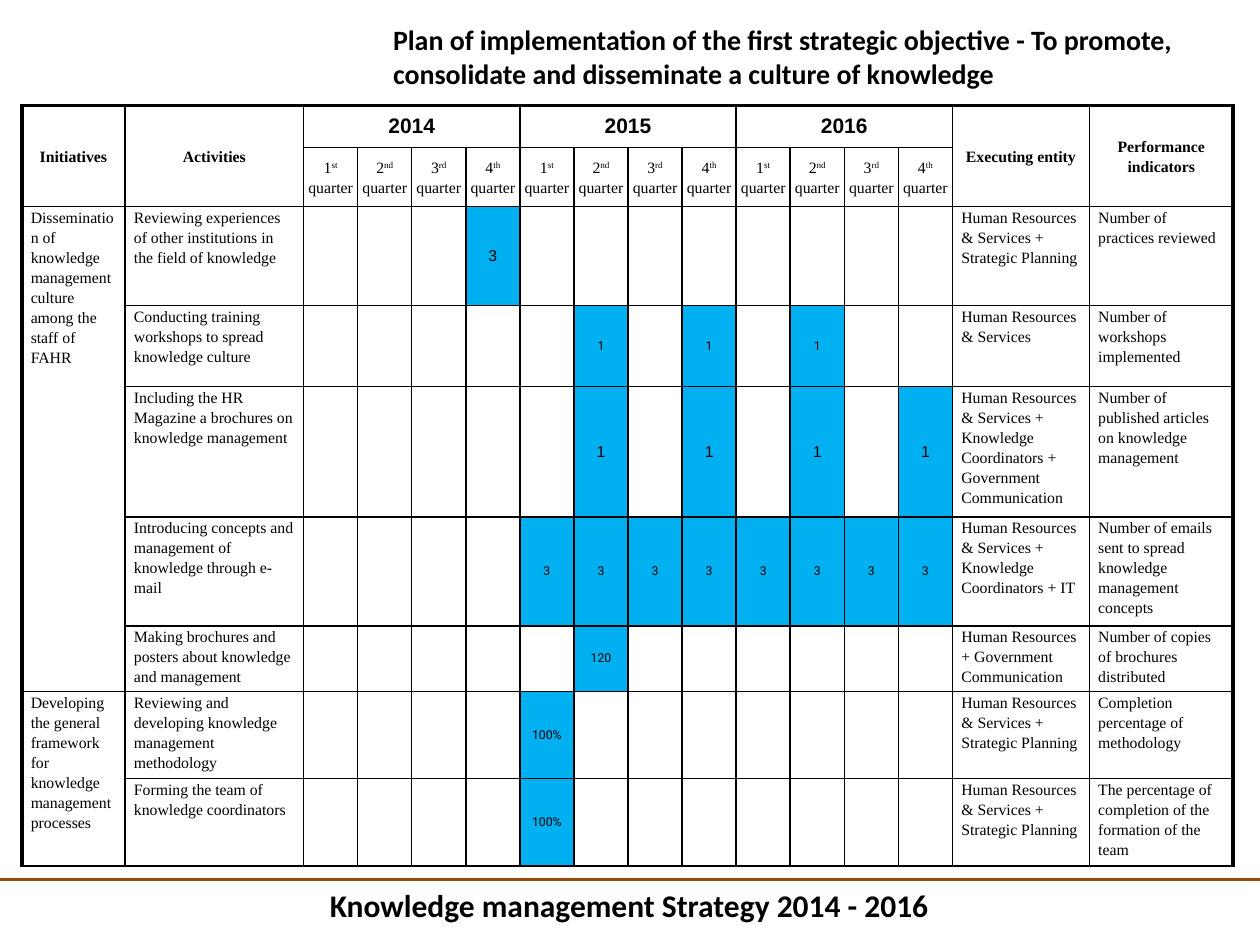
from lxml import etree
from pptx import Presentation
from pptx.dml.color import RGBColor
from pptx.enum.shapes import MSO_CONNECTOR
from pptx.enum.text import MSO_ANCHOR, PP_ALIGN
from pptx.oxml.ns import qn
from pptx.util import Cm, Pt

LEFT, CENTER = PP_ALIGN.LEFT, PP_ALIGN.CENTER
TOP, MIDDLE = MSO_ANCHOR.TOP, MSO_ANCHOR.MIDDLE
STRAIGHT = MSO_CONNECTOR.STRAIGHT

COLORS = {"ink": "000000", "paper": "FFFFFF", "active": "00B0F0", "rule": "984807"}
SERIF, SANS, HEAD = "Times New Roman", "Arial", "Calibri"
BODY = {"name": SERIF, "size": Pt(9), "bold": False}
LABEL = {**BODY, "bold": True}
YEAR = {"name": SANS, "size": Pt(12), "bold": True}
LARGE = {"name": SANS, "size": Pt(9), "bold": False}
SMALL = {"name": "Roboto", "size": Pt(7), "bold": False}
TITLE = {"name": HEAD, "size": Pt(16), "bold": True}
FOOTER = {"name": HEAD, "size": Pt(18), "bold": True}

COLS = [2.08, 3.6] + [1.09] * 12 + [2.76, 2.9]
ROWS = [0.84, 1.19, 2, 1.63, 1.98, 2.06, 1.27, 1.22, 1.4]
YEARS = ["2014", "2015", "2016"]
ENDINGS = ["st", "nd", "rd", "th"]
PAD = Cm(0.18)
FIRST, ENTITY, LAST = 2, 14, 15  # first quarter, entity and indicator columns
HEADS = {0: "Initiatives", 1: "Activities", ENTITY: "Executing entity",
         LAST: "Performance indicators"}
PLANNING = "Human Resources & Services + Strategic Planning"

# first row, last row, text
GOALS = [
    (2, 6, "Dissemination of knowledge management culture among the staff of FAHR"),
    (7, 8, "Developing the general framework for knowledge management processes"),
]

# activity, {quarter counted from 0: target}, target format, entity, indicator
TASKS = [
    ("Reviewing experiences of other institutions in the field of knowledge",
     {3: "3"}, LARGE, PLANNING, "Number of practices reviewed"),
    ("Conducting training workshops to spread knowledge culture",
     dict.fromkeys((5, 7, 9), "1"), SMALL,
     "Human Resources & Services", "Number of workshops implemented"),
    ("Including the HR Magazine a brochures on knowledge management",
     dict.fromkeys((5, 7, 9, 11), "1"), LARGE,
     "Human Resources & Services + Knowledge Coordinators + Government Communication",
     "Number of published articles on knowledge management"),
    ("Introducing concepts and management of knowledge through e-mail",
     dict.fromkeys(range(4, 12), "3"), SMALL,
     "Human Resources & Services + Knowledge Coordinators + IT",
     "Number of emails sent to spread knowledge management concepts"),
    ("Making brochures and posters about knowledge and management",
     {5: "120"}, SMALL, "Human Resources + Government Communication",
     "Number of copies of brochures distributed"),
    ("Reviewing and developing knowledge management methodology",
     {4: "100%"}, SMALL, PLANNING, "Completion percentage of methodology"),
    ("Forming the team of knowledge coordinators",
     {4: "100%"}, SMALL, PLANNING,
     "The percentage of completion of the formation of the team"),
]


def paint(name):
    return RGBColor.from_string(COLORS[name])


def add_run(para, text, style):
    run = para.add_run()
    run.text = text
    for key, value in style.items():
        setattr(run.font, key, value)
    run.font.color.rgb = paint("ink")
    return run


def fill_cell(cell, text, style, align=LEFT, anchor=TOP, pad=PAD, gap=1.15):
    cell.vertical_anchor = anchor
    cell.margin_left = cell.margin_right = pad
    cell.margin_top = cell.margin_bottom = 0
    para = cell.text_frame.paragraphs[0]
    para.alignment = align
    para.line_spacing = gap
    if text:
        add_run(para, text, style)
    return para


def set_edge(cell, side, width):
    props = cell._tc.get_or_add_tcPr()
    line = etree.SubElement(props, qn(f"a:ln{side}"), w=str(Pt(width)))
    solid = etree.SubElement(line, qn("a:solidFill"))
    etree.SubElement(solid, qn("a:srgbClr"), val=COLORS["ink"])


def style_grid(table):
    """Give every cell its borders, thick on the left, right and top, and its fill."""
    for row in range(len(ROWS)):
        for col in range(len(COLS)):
            cell = table.cell(row, col)
            thick = {"L": col == 0, "R": col == LAST, "T": row == 0, "B": False}
            for side, heavy in thick.items():
                set_edge(cell, side, 2.25 if heavy else 1)
            cell.fill.solid()
            cell.fill.fore_color.rgb = paint("paper")


def fill_heads(table):
    for col, text in HEADS.items():
        table.cell(0, col).merge(table.cell(1, col))
        fill_cell(table.cell(0, col), text, LABEL, CENTER, MIDDLE)
    for num, year in enumerate(YEARS):
        col = FIRST + 4 * num
        table.cell(0, col).merge(table.cell(0, col + 3))
        fill_cell(table.cell(0, col), year, YEAR, CENTER, MIDDLE, gap=1)
        for step, ending in enumerate(ENDINGS):
            cell = table.cell(1, col + step)
            para = fill_cell(cell, str(step + 1), BODY, CENTER, MIDDLE, 0)
            raised = add_run(para, ending, BODY)
            raised._r.get_or_add_rPr().set("baseline", "30000")
            add_run(para, " quarter", BODY)


def fill_tasks(table):
    for start, end, text in GOALS:
        table.cell(start, 0).merge(table.cell(end, 0))
        fill_cell(table.cell(start, 0), text, BODY)
    for row, (task, marks, style, entity, sign) in enumerate(TASKS, 2):
        for col, text in {1: task, ENTITY: entity, LAST: sign}.items():
            fill_cell(table.cell(row, col), text, BODY)
        for quarter, text in marks.items():
            cell = table.cell(row, FIRST + quarter)
            fill_cell(cell, text, style, CENTER, MIDDLE, 0, 1)
            cell.fill.fore_color.rgb = paint("active")


def add_plan(slide):
    frame = slide.shapes.add_table(len(ROWS), len(COLS), Cm(0.44), Cm(2.13),
                                   Cm(sum(COLS)), Cm(sum(ROWS)))
    table = frame.table
    table.first_row = table.horz_banding = False
    for col, width in zip(table.columns, COLS):
        col.width = Cm(width)
    for row, height in zip(table.rows, ROWS):
        row.height = Cm(height)
    style_grid(table)
    fill_heads(table)
    fill_tasks(table)


def set_title(slide, text):
    title = slide.shapes.title
    title.left, title.top = Cm(7.67), Cm(0.33)
    title.width, title.height = Cm(16.64), Cm(1.6)
    title.text_frame.vertical_anchor = MIDDLE
    para = title.text_frame.paragraphs[0]
    para.alignment = LEFT
    add_run(para, text, TITLE)


def add_footer(slide, text, width):
    top = Cm(17.73)
    box = slide.shapes.add_textbox(Cm(6.4), top, Cm(12.7), Cm(1.02))
    box.text_frame.word_wrap = False
    add_run(box.text_frame.paragraphs[0], text, FOOTER)
    rule = slide.shapes.add_connector(STRAIGHT, 0, top, width, top)
    rule.line.color.rgb = paint("rule")
    rule.line.width = Pt(2.25)
    etree.SubElement(rule._element.spPr, qn("a:effectLst"))


def main():
    deck = Presentation()
    deck.slide_width, deck.slide_height = Cm(25.4), Cm(19.05)
    slide = deck.slides.add_slide(deck.slide_layouts[5])
    add_footer(slide, "Knowledge management Strategy 2014 - 2016", deck.slide_width)
    set_title(slide, "Plan of implementation of the first strategic objective - "
                     "To promote, consolidate and disseminate a culture of knowledge")
    add_plan(slide)
    deck.save("out.pptx")


if __name__ == "__main__":
    main()
